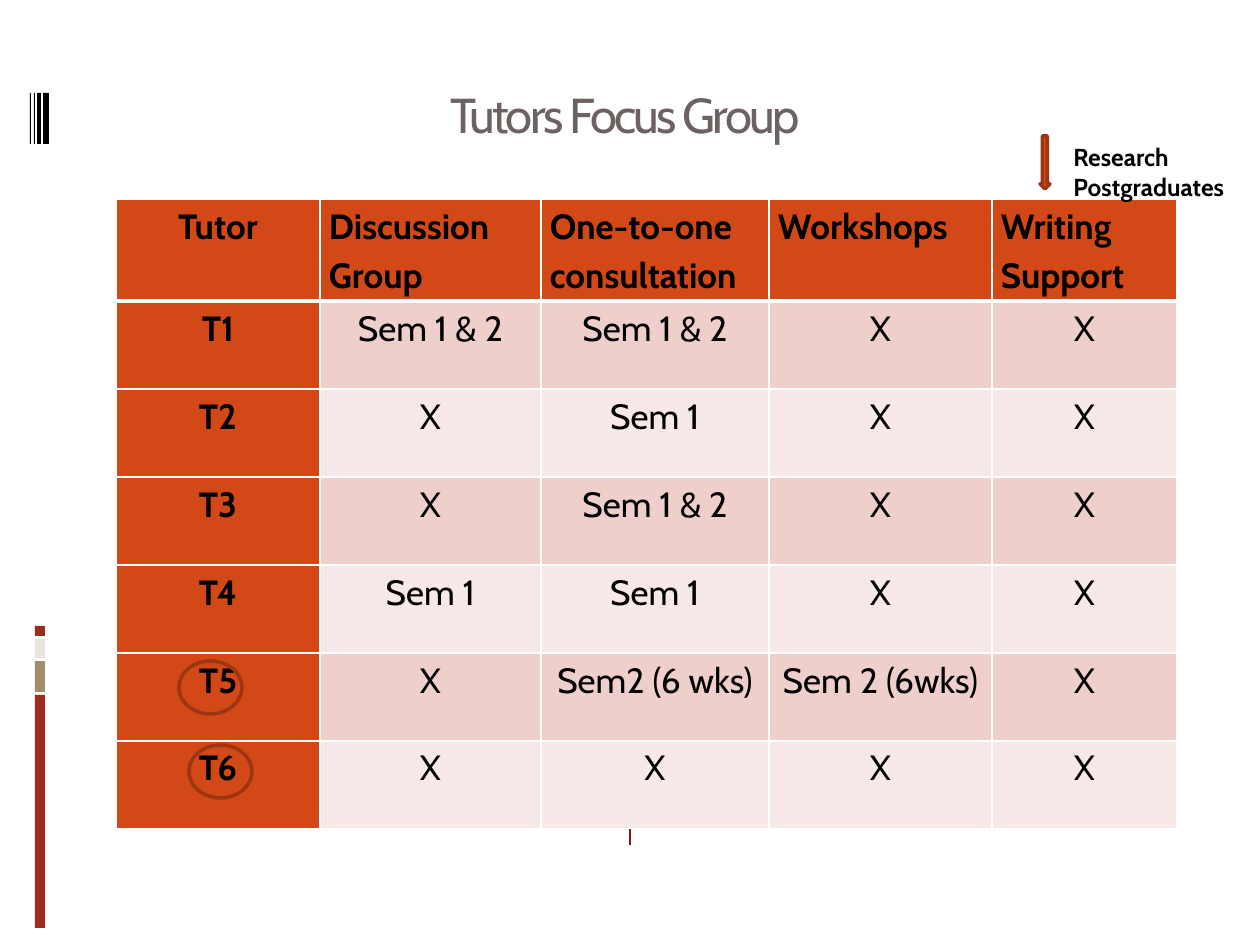
from lxml import etree
from pptx import Presentation
from pptx import util as u
from pptx.dml.color import RGBColor
from pptx.enum import shapes, text
from pptx.oxml.ns import qn

SCALE = 914400 / 126


def px(length):
    return u.Emu(round(length * SCALE))


def color(value):
    return RGBColor.from_string(value)


class Deck:
    font = "Cabin"
    black = "000000"
    white = "FFFFFF"
    orange = "D34817"
    outline = "9C3511"
    bands = ("EFCFCC", "F7E9E8")

    def __init__(self, width, height):
        self.prs = Presentation()
        self.prs.slide_width, self.prs.slide_height = px(width), px(height)
        self.slide = self.prs.slides.add_slide(self.prs.slide_layouts[6])

    def shape(self, kind, box, fill=None, line=None):
        shape = self.slide.shapes.add_shape(kind, *map(px, box))
        shape.shadow.inherit = False
        if fill:
            shape.fill.solid()
            shape.fill.fore_color.rgb = color(fill)
        else:
            shape.fill.background()
        if line:
            shape.line.color.rgb = color(line)
            shape.line.width = u.Pt(2)
        else:
            shape.line.fill.background()

    def line(self, start, end, stroke):
        line = self.slide.shapes.add_connector(
            shapes.MSO_CONNECTOR.STRAIGHT, *map(px, start + end))
        line.line.color.rgb = color(stroke)
        line.line.width = u.Pt(0.75)
        etree.SubElement(line._element.spPr, qn("a:effectLst"))

    def run(self, paragraph, words, size, fill, bold=False):
        run = paragraph.add_run()
        run.text = words
        run.font.name = self.font
        run.font.size = u.Pt(size)
        run.font.bold = bold
        run.font.color.rgb = color(fill)
        return run

    def text_box(self, box):
        frame = self.slide.shapes.add_textbox(*map(px, box)).text_frame
        frame.word_wrap = True
        return frame

    def title(self, box, words, top_inset):
        frame = self.text_box(box)
        frame.vertical_anchor = text.MSO_ANCHOR.MIDDLE
        frame.margin_top, frame.margin_bottom = px(top_inset), 0
        paragraph = frame.paragraphs[0]
        paragraph.alignment = text.PP_ALIGN.CENTER
        run = self.run(paragraph, words, 28, "6C6262")
        run.font._element.set("spc", "-150")

    def label(self, box, lines):
        frame = self.text_box(box)
        for i, words in enumerate(lines):
            paragraph = frame.add_paragraph() if i else frame.paragraphs[0]
            self.run(paragraph, words, 14, self.black, bold=True)

    def border(self, cell, side, points):
        props = cell._tc.get_or_add_tcPr()
        edge = etree.SubElement(props, qn("a:ln" + side), w=str(u.Pt(points)))
        fill = etree.SubElement(edge, qn("a:solidFill"))
        etree.SubElement(fill, qn("a:srgbClr"), val=self.white)

    def cell(self, cell, words, row, col):
        heading = row == 0 or col == 0
        for side in "LRTB":
            thick = (row, side) in ((0, "B"), (1, "T"))
            self.border(cell, side, 3 if thick else 1)
        cell.fill.solid()
        cell.fill.fore_color.rgb = color(
            self.orange if heading else self.bands[(row - 1) % 2])
        cell.margin_left = cell.margin_right = px(9)
        cell.margin_top = cell.margin_bottom = 0
        paragraph = cell.text_frame.paragraphs[0]
        left = row == 0 and col > 0
        paragraph.alignment = text.PP_ALIGN.LEFT if left else text.PP_ALIGN.CENTER
        paragraph.line_spacing = 1.15
        self.run(paragraph, words, 20, self.black, bold=heading)

    def table(self, left, top, widths, heights, rows):
        table = self.slide.shapes.add_table(
            len(rows), len(widths), px(left), px(top),
            px(sum(widths)), px(sum(heights))).table
        for column, width in zip(table.columns, widths):
            column.width = px(width)
        for r, (height, row) in enumerate(zip(heights, rows)):
            table.rows[r].height = px(height)
            for c, words in enumerate(row):
                self.cell(table.cell(r, c), words, r, c)


def main():
    deck = Deck(1260, 945)
    kinds = shapes.MSO_SHAPE

    for top, height, fill in ((695, 233, "9B2D1F"), (661, 31, "A28E6A"),
                              (639, 19, "E9E5DC"), (626, 10, "9B2D1F")):
        deck.shape(kinds.RECTANGLE, (35, top, 10, height), fill)
    for left, width in ((43, 6), (37, 4), (34, 1), (30, 1)):
        deck.shape(kinds.RECTANGLE, (left, 93, width, 51), deck.black)
    deck.line((630, 221), (630, 845), "751D12")

    deck.title((53, 32, 1144, 97), "Tutors Focus Group", 67)

    schedule = (
        ("Tutor", "Discussion Group", "One-to-one consultation",
         "Workshops", "Writing Support"),
        ("T1", "Sem 1 & 2", "Sem 1 & 2", "X", "X"),
        ("T2", "X", "Sem 1", "X", "X"),
        ("T3", "X", "Sem 1 & 2", "X", "X"),
        ("T4", "Sem 1", "Sem 1", "X", "X"),
        ("T5", "X", "Sem2 (6 wks)", "Sem 2 (6wks)", "X"),
        ("T6", "X", "X", "X", "X"),
    )
    deck.table(116, 199, (204, 221, 228, 223, 185), [102] + [88] * 6, schedule)

    for left, top in ((179, 661), (189, 745)):
        deck.shape(kinds.OVAL, (left, top, 63, 53), line=deck.outline)
    deck.shape(kinds.DOWN_ARROW, (1040, 136, 10, 53), deck.orange, deck.outline)
    deck.label((1061, 136, 179, 72), ("Research", "Postgraduates"))

    deck.prs.save("out.pptx")


if __name__ == "__main__":
    main()
